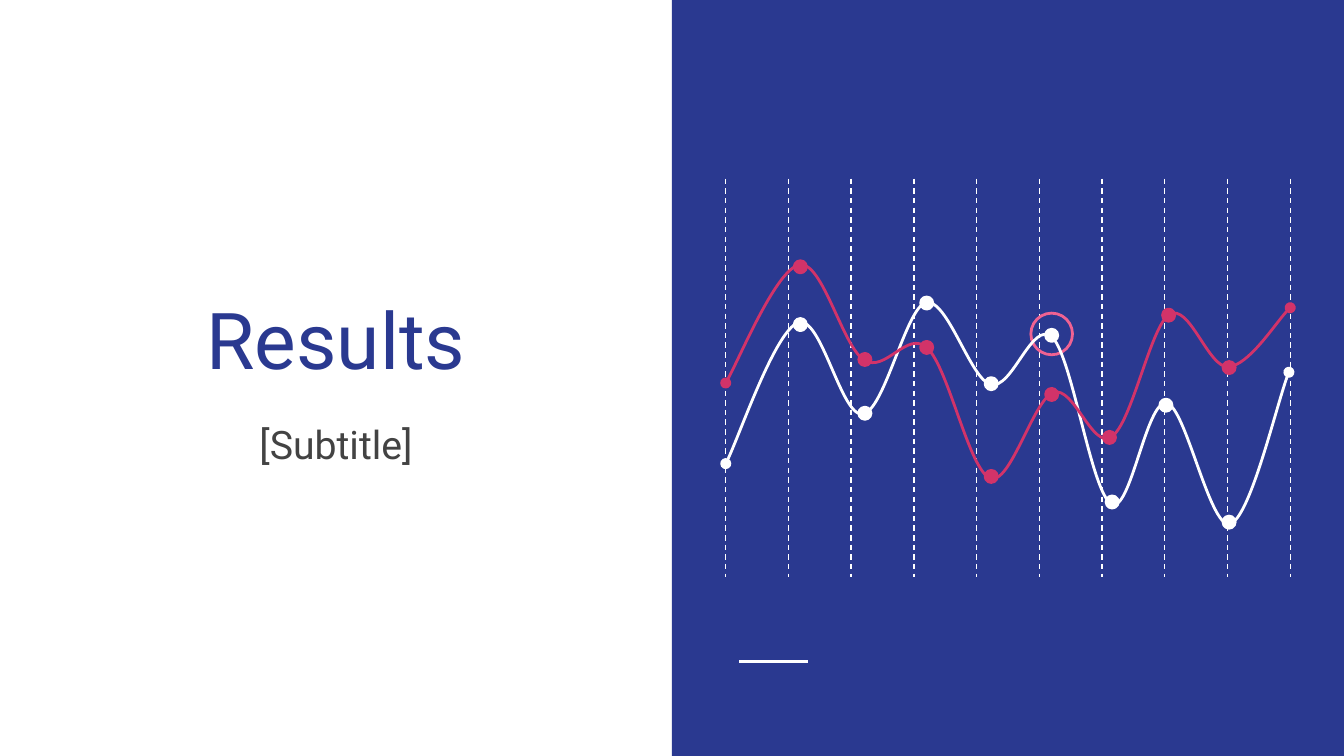
from lxml.etree import SubElement
from pptx import Presentation
from pptx.dml.color import RGBColor
from pptx.enum.dml import MSO_LINE
from pptx.enum.shapes import MSO_CONNECTOR, MSO_SHAPE
from pptx.enum.text import MSO_ANCHOR, MSO_AUTO_SIZE, PP_ALIGN
from pptx.oxml.ns import qn
from pptx.util import Pt

PX = 9144
SLIDE_W = 1000
SLIDE_H = SLIDE_W * 9 / 16
WHITE = RGBColor(0xFF, 0xFF, 0xFF)
BLUE = RGBColor(0x2A, 0x39, 0x90)
RED = RGBColor(0xD2, 0x33, 0x69)
PINK = RGBColor(0xF0, 0x62, 0x92)
GREY = RGBColor(0x43, 0x43, 0x43)
DOT = 9

WHITE_CURVE = [
    (0, 212),
    (9, 195), (37, 113), (54, 107),
    (71, 101), (86, 178), (102, 175),
    (118, 173), (134, 96), (149, 92),
    (165, 89), (182, 149), (197, 153),
    (213, 158), (228, 104), (243, 118),
    (258, 133), (272, 234), (287, 242),
    (301, 250), (313, 164), (328, 167),
    (342, 169), (360, 260), (375, 257),
    (390, 253), (411, 163), (419, 144),
]
WHITE_DOTS = [(51, 104), (99, 170), (145, 88), (193, 148),
              (238, 112), (283, 236), (323, 164), (370, 251)]
RED_CURVE = [
    (0, 152),
    (9, 137), (38, 67), (55, 64),
    (72, 61), (87, 125), (103, 135),
    (119, 145), (135, 112), (150, 126),
    (166, 141), (181, 217), (197, 223),
    (212, 228), (229, 164), (244, 159),
    (259, 154), (273, 202), (287, 192),
    (302, 183), (316, 110), (330, 101),
    (345, 92), (359, 141), (374, 140),
    (389, 139), (412, 103), (420, 96),
]
RED_DOTS = [(51, 61), (99, 130), (145, 121), (193, 217),
            (238, 156), (281, 188), (325, 97), (370, 136)]


def px(*lengths):
    return [round(v * PX) for v in lengths]


def style_shape(sp, fill=None, line=None):
    sp.shadow.inherit = False
    if fill is None:
        sp.fill.background()
    else:
        sp.fill.solid()
        sp.fill.fore_color.rgb = fill
    if line is None:
        sp.line.fill.background()
    else:
        sp.line.color.rgb = line
        sp.line.width = Pt(1.5)


def add_preset(shapes, kind, box, fill=None, line=None):
    sp = shapes.add_shape(kind, *px(*box))
    style_shape(sp, fill, line)
    return sp


def add_line(shapes, start, end, width, dash=None):
    cx = shapes.add_connector(MSO_CONNECTOR.STRAIGHT, *px(*start, *end))
    cx.line.color.rgb = WHITE
    cx.line.width = Pt(width)
    if dash:
        cx.line.dash_style = dash
    SubElement(cx._element.spPr, qn("a:effectLst"))


def add_curve(shapes, points, color):
    builder = shapes.build_freeform(*points[0], scale=PX)
    builder.add_line_segments(points[1:], close=False)
    sp = builder.convert_to_shape()
    style_shape(sp, line=color)
    outline = next(sp._element.iter(qn("a:path")))
    segments = outline.findall(qn("a:lnTo"))
    for i in range(0, len(segments), 3):
        bezier = SubElement(outline, qn("a:cubicBezTo"))
        for segment in segments[i:i + 3]:
            bezier.append(segment[0])
            outline.remove(segment)
    ln = sp._element.spPr.find(qn("a:ln"))
    for end in ("a:headEnd", "a:tailEnd"):
        SubElement(ln, qn(end), type="oval")


def add_gridlines(s, box, count):
    x, y, w, h = box
    shapes = s.shapes.add_group_shape().shapes
    for i in range(count):
        line_x = x + w * i / (count - 1)
        add_line(shapes, (line_x, y), (line_x, y + h), 0.75, MSO_LINE.DASH)


def add_series(s, box, curve, dots, color):
    x, y = box[:2]
    shapes = s.shapes.add_group_shape().shapes
    add_curve(shapes, [(x + dx, y + dy) for dx, dy in curve], color)
    for dx, dy in dots:
        add_preset(shapes, MSO_SHAPE.OVAL, (x + dx, y + dy, DOT, DOT), color, color)


def add_graph(s, box):
    x, y = box[:2]
    add_gridlines(s, box, 10)
    add_preset(s.shapes, MSO_SHAPE.OVAL, (x + 227, y + 100, 31, 31), line=PINK)
    add_series(s, box, WHITE_CURVE, WHITE_DOTS, WHITE)
    add_series(s, box, RED_CURVE, RED_DOTS, RED)


def add_panel(s, box):
    x, y = box[:2]
    add_preset(s.shapes, MSO_SHAPE.RECTANGLE, box, BLUE)
    add_line(s.shapes, (x + 50, y + 492), (x + 101, y + 492), 1.5)
    add_graph(s, (x + 40, y + 133, 420, 296))


def write_text(sp, box, text, anchor, size, color):
    sp.left, sp.top, sp.width, sp.height = px(*box)
    tf = sp.text_frame
    inset = 10 * PX
    frame = dict(word_wrap=True, auto_size=MSO_AUTO_SIZE.NONE, vertical_anchor=anchor,
                 margin_left=inset, margin_right=inset, margin_top=inset, margin_bottom=inset)
    for name, value in frame.items():
        setattr(tf, name, value)
    p = tf.paragraphs[0]
    for name, value in dict(alignment=PP_ALIGN.CENTER, line_spacing=1.0).items():
        setattr(p, name, value)
    r = p.add_run()
    r.text = text
    for name, value in dict(name="Roboto", size=Pt(size), bold=False).items():
        setattr(r.font, name, value)
    r.font.color.rgb = color


def add_heading(s, box):
    x, y, w, h = box
    write_text(s.shapes.title, (x, y, w, 171), "Results", MSO_ANCHOR.BOTTOM, 42, BLUE)
    subtitle = s.shapes.add_textbox(0, 0, PX, PX)
    write_text(subtitle, (x, y + 177, w, h - 177), "[Subtitle]", MSO_ANCHOR.TOP, 21, GREY)


def main():
    prs = Presentation()
    prs.slide_width, prs.slide_height = px(SLIDE_W, SLIDE_H)
    s = prs.slides.add_slide(prs.slide_layouts[5])
    add_panel(s, (SLIDE_W / 2, 0, SLIDE_W / 2, SLIDE_H))
    add_heading(s, (29, 126, 442, 316))
    prs.save("out.pptx")


if __name__ == "__main__":
    main()
